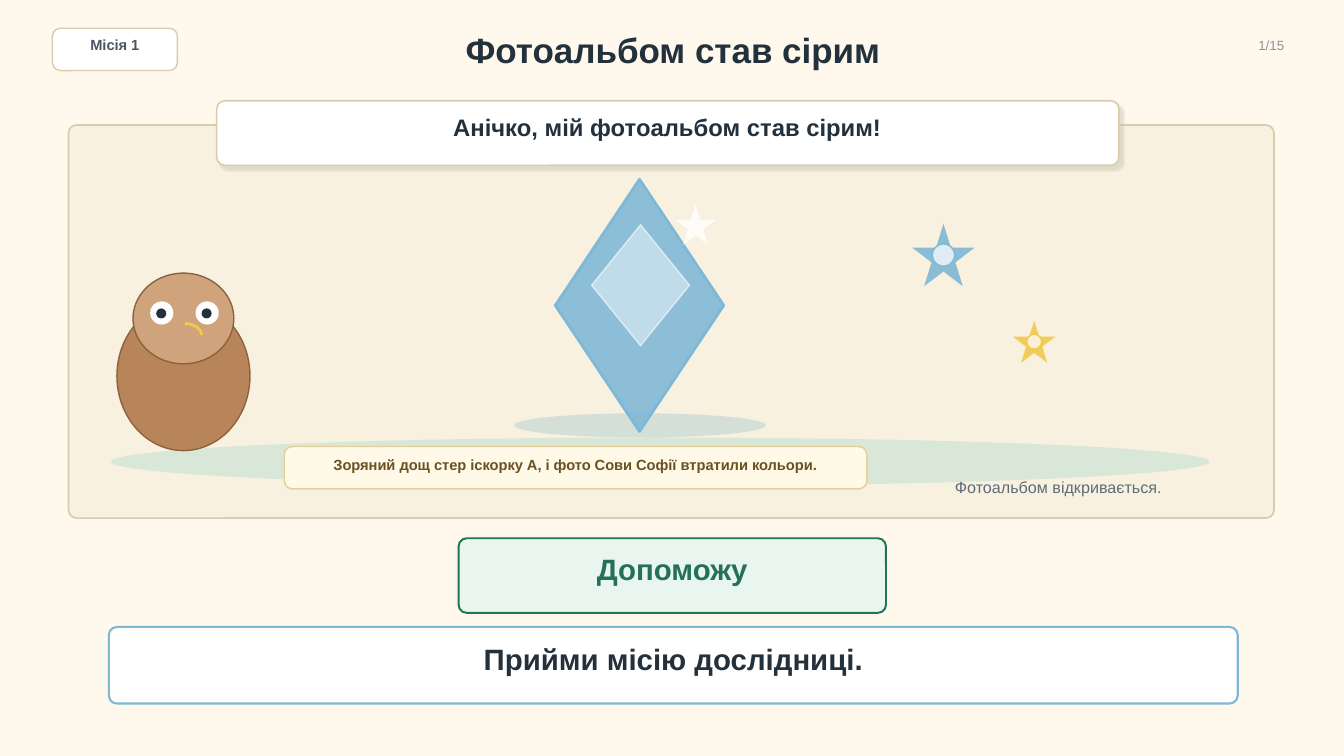
"""Build the opening slide of the grey photo album mission."""
from lxml.etree import SubElement
from pptx import Presentation
from pptx.dml.color import RGBColor
from pptx.enum.shapes import MSO_SHAPE
from pptx.enum.text import MSO_ANCHOR, MSO_AUTO_SIZE, PP_ALIGN
from pptx.oxml.ns import qn
from pptx.util import Pt

CREAM = RGBColor(0xFF, 0xF9, 0xED)
SCENE = RGBColor(0xF8, 0xF1, 0xDF)
WHITE = RGBColor(0xFF, 0xFF, 0xFF)
SAND = RGBColor(0xD9, 0xCB, 0xAE)
INK = RGBColor(0x23, 0x31, 0x3D)
SLATE = RGBColor(0x4B, 0x55, 0x63)
GREY = RGBColor(0x8A, 0x92, 0x9A)
STEEL = RGBColor(0x5E, 0x6C, 0x78)
MEADOW = RGBColor(0xD7, 0xE7, 0xD8)
SHADE = RGBColor(0xC9, 0xD9, 0xD5)
BODY = RGBColor(0xB8, 0x84, 0x5A)
HEAD = RGBColor(0xCF, 0xA4, 0x7C)
FEATHER = RGBColor(0x8C, 0x62, 0x3E)
YELLOW = RGBColor(0xF2, 0xC9, 0x4C)
BLUE = RGBColor(0x7F, 0xB7, 0xD6)
NOTE = RGBColor(0xFF, 0xF9, 0xE8)
NOTE_EDGE = RGBColor(0xE4, 0xCF, 0x98)
NOTE_TEXT = RGBColor(0x6B, 0x51, 0x20)
MINT = RGBColor(0xE9, 0xF6, 0xF0)
GREEN = RGBColor(0x24, 0x70, 0x58)
RADIUS = 5.76


def add_figure(kind, box, fill=None, line=None, width=1, alpha=100, line_alpha=100):
    sp = s.shapes.add_shape(kind, *map(Pt, box))
    sp.shadow.inherit = False
    if kind == MSO_SHAPE.ROUNDED_RECTANGLE:
        sp.adjustments[0] = RADIUS / min(box[2:])
    for part, color, opacity in ((sp.fill, fill, alpha), (sp.line.fill, line, line_alpha)):
        if color is None:
            part.background()
            continue
        part.solid()
        part.fore_color.rgb = color
    if line is not None:
        sp.line.width = Pt(width)
    for parent, opacity in ((sp._element.spPr, alpha), (sp.line._get_or_add_ln(), line_alpha)):
        if opacity < 100:
            clr = parent.find(qn("a:solidFill")).find(qn("a:srgbClr"))
            SubElement(clr, qn("a:alpha"), val=str(opacity * 1000))
    return sp


def add_label(box, text, size, color, bold=True, align=PP_ALIGN.CENTER, sp=None):
    if sp is None:
        sp = s.shapes.add_textbox(*map(Pt, box))
    else:
        sp.left, sp.top, sp.width, sp.height = map(Pt, box)
    tf = sp.text_frame
    tf.word_wrap = True
    tf.auto_size = MSO_AUTO_SIZE.NONE
    tf.vertical_anchor = MSO_ANCHOR.MIDDLE
    tf.margin_left = tf.margin_top = tf.margin_right = tf.margin_bottom = 0
    p = tf.paragraphs[0]
    p.text = text
    p.alignment = align
    p.font.name = "Arial"
    p.font.size = Pt(size)
    p.font.bold = bold
    p.font.color.rgb = color


prs = Presentation()
prs.slide_width, prs.slide_height = Pt(960), Pt(540)
s = prs.slides.add_slide(prs.slide_layouts[5])
s.background.fill.solid()
s.background.fill.fore_color.rgb = CREAM

CARD, OVAL = MSO_SHAPE.ROUNDED_RECTANGLE, MSO_SHAPE.OVAL
STAR, DIAMOND = MSO_SHAPE.STAR_5_POINT, MSO_SHAPE.DIAMOND

add_label((144, 18, 673.2, 34.56), "Фотоальбом став сірим", 25, INK, sp=s.shapes.title)
add_figure(CARD, (37.44, 20.16, 89.28, 30.24), WHITE, SAND)
add_label((44.64, 26.64, 74.88, 10.8), "Місія 1", 10.5, SLATE)
add_label((865.44, 26.64, 51.84, 11.52), "1/15", 9.5, GREY, False, PP_ALIGN.RIGHT)

add_figure(CARD, (48.96, 89.28, 861.12, 280.8), SCENE, SAND, 1.2)
add_figure(OVAL, (79.2, 312.48, 784.8, 34.56), MEADOW, alpha=92)

add_figure(OVAL, (83.52, 215.28, 95.04, 106.56), BODY, FEATHER)
add_figure(OVAL, (95.04, 195.12, 72, 64.8), HEAD, FEATHER)
for x in (107.28, 139.68):
    add_figure(OVAL, (x, 215.28, 16.56, 16.56), WHITE)
    add_figure(OVAL, (x + 4.32, 220.32, 7.2, 7.2), INK)
add_figure(MSO_SHAPE.ARC, (120.24, 231.12, 23.76, 16.56), None, YELLOW, 2)

add_figure(OVAL, (367.2, 295.2, 180, 17.28), SHADE, alpha=75)
add_figure(DIAMOND, (396.72, 128.16, 120.24, 180), BLUE, BLUE, 2, 88)
add_figure(DIAMOND, (422.64, 160.56, 69.84, 86.4), WHITE, WHITE, 1, 45, 60)
add_figure(STAR, (482.4, 146.16, 28.8, 28.8), WHITE, alpha=82)
for x, y, size, dot, color in ((651.6, 159.84, 44.64, 15.84, BLUE),
                               (723.6, 228.96, 30.24, 10.8, YELLOW)):
    inset = (size - dot) / 2
    add_figure(STAR, (x, y, size, size), color, alpha=90)
    add_figure(OVAL, (x + inset, y + inset, dot, dot), WHITE, color, alpha=72)

speech = add_figure(CARD, (154.8, 72, 644.4, 46.08), WHITE, SAND, 1.1)
effects = speech._element.spPr.find(qn("a:effectLst"))
shadow = SubElement(effects, qn("a:outerShdw"), blurRad=str(Pt(1)), dist=str(Pt(4)),
                    dir="2700000", algn="tl", rotWithShape="0")
tint = SubElement(shadow, qn("a:srgbClr"), val="C8C1B0")
SubElement(tint, qn("a:alpha"), val="45000")
add_label((171.36, 81.36, 610.56, 18.72), "Анічко, мій фотоальбом став сірим!", 17, INK)

add_figure(CARD, (203.04, 318.96, 416.16, 30.24), NOTE, NOTE_EDGE)
add_label((214.56, 325.44, 393.12, 12.96),
          "Зоряний дощ стер іскорку А, і фото Сови Софії втратили кольори.", 10.5, NOTE_TEXT)
add_figure(CARD, (77.76, 447.84, 806.4, 54.72), WHITE, BLUE, 1.5)
add_label((96.48, 460.08, 768.96, 20.16), "Прийми місію дослідниці.", 21, INK)
add_figure(CARD, (327.6, 384.48, 305.28, 53.28), MINT, GREEN, 1.4)
add_label((344.16, 394.56, 272.16, 23.04), "Допоможу", 21, GREEN)
add_label((648, 339.84, 216, 15.84), "Фотоальбом відкривається.", 11.5, STEEL, False)

prs.save("out.pptx")
